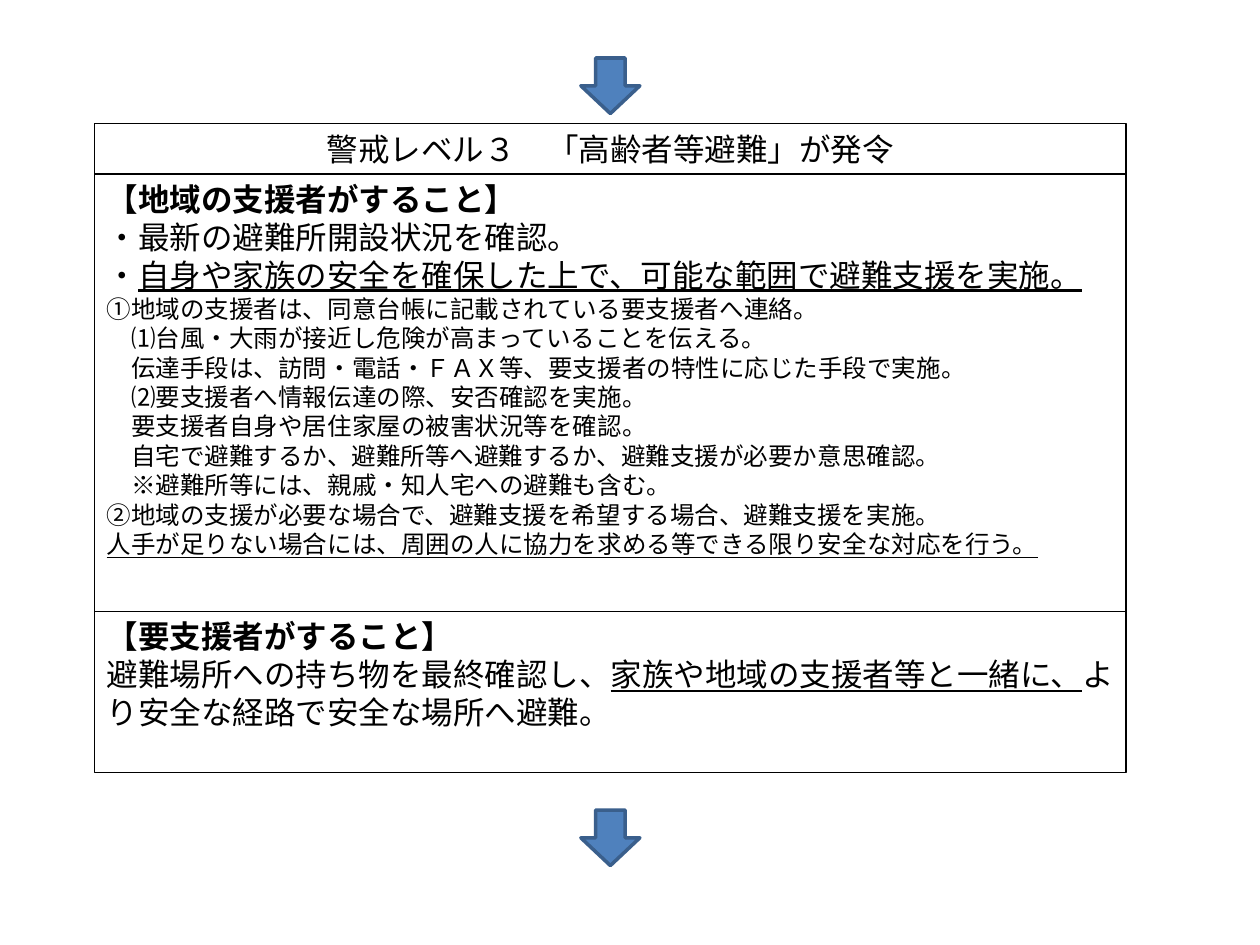
from lxml import etree
from pptx import Presentation
from pptx import util as u
from pptx.dml.color import RGBColor
from pptx.enum import shapes, text
from pptx.oxml.ns import qn

COLORS = {"ink": "000000", "arrow": "4F81BD", "arrow_edge": "3A5F8C"}
NOTO = "Noto Sans CJK JP"
LEFT, WIDTH = 1.9, 20.8
TITLE_TOP, BODY_TOP, DIVIDER_TOP = 2.49, 3.51, 12.32

deck = Presentation()
deck.slide_width, deck.slide_height = u.Cm(25.4), u.Cm(19.05)
slide = deck.slides.add_slide(deck.slide_layouts[6])


def add_frame(top, height):
    frame = slide.shapes.add_shape(
        shapes.MSO_SHAPE.RECTANGLE, u.Cm(LEFT), u.Cm(top), u.Cm(WIDTH), u.Cm(height))
    frame.shadow.inherit = False
    frame.fill.background()
    frame.line.color.rgb = RGBColor.from_string(COLORS["ink"])
    frame.line.width = u.Pt(0.75)
    frame.text_frame.word_wrap = True
    frame.text_frame.vertical_anchor = text.MSO_ANCHOR.TOP
    return frame.text_frame


def add_run(paragraph, words, size, font, bold=False, underline=False):
    run = paragraph.add_run()
    run.text = words
    run.font.size = u.Pt(size)
    run.font.name = font
    run.font.bold = bold
    run.font.underline = underline
    run.font.color.rgb = RGBColor.from_string(COLORS["ink"])
    etree.SubElement(run.font._element, qn("a:ea"), typeface=font)


title = add_frame(TITLE_TOP, BODY_TOP - TITLE_TOP).paragraphs[0]
title.alignment = text.PP_ALIGN.CENTER
add_run(title, "警戒レベル３　「高齢者等避難」が発令", 18, "Calibri")

supporter_heading = [("【地域の支援者がすること】", 18, "Calibri", True)]
supporter_points = [
    [("・最新の避難所開設状況を確認。", 18, "Calibri")],
    [("・", 18, "Calibri"),
     ("自身や家族の安全を確保した上で、可能な範囲で避難支援を実施。", 18, "Calibri", False, True)],
]
supporter_steps = [[(step, 14, NOTO)] for step in (
    "①地域の支援者は、同意台帳に記載されている要支援者へ連絡。",
    "　⑴台風・大雨が接近し危険が高まっていることを伝える。",
    "　伝達手段は、訪問・電話・ＦＡＸ等、要支援者の特性に応じた手段で実施。",
    "　⑵要支援者へ情報伝達の際、安否確認を実施。",
    "　要支援者自身や居住家屋の被害状況等を確認。",
    "　自宅で避難するか、避難所等へ避難するか、避難支援が必要か意思確認。",
    "　※避難所等には、親戚・知人宅への避難も含む。",
    "②地域の支援が必要な場合で、避難支援を希望する場合、避難支援を実施。",
)]
supporter_note = [
    ("人手が足りない場合には、周囲の人に協力を求める等できる限り安全な対応を行う。", 14, NOTO, False, True)]
evacuee_heading = [("【要支援者がすること】", 18, "Arial", True)]
evacuee_action = [
    ("避難場所への持ち物を最終確認し、", 18, NOTO),
    ("家族や地域の支援者等と一緒に、", 18, NOTO, False, True),
    ("より安全な経路で安全な場所へ避難。", 18, NOTO),
]

duties = add_frame(BODY_TOP, 12.07)
lines = [supporter_heading, *supporter_points, *supporter_steps,
         supporter_note, evacuee_heading, evacuee_action]
for index, line in enumerate(lines):
    paragraph = duties.add_paragraph() if index else duties.paragraphs[0]
    paragraph.alignment = text.PP_ALIGN.LEFT
    if line is evacuee_heading:
        paragraph.space_before = u.Pt(33.6)
    for run_parts in line:
        add_run(paragraph, *run_parts)

for arrow_top in (1.17, 16.33):
    arrow = slide.shapes.add_shape(
        shapes.MSO_SHAPE.DOWN_ARROW, u.Cm(11.71), u.Cm(arrow_top), u.Cm(1.19), u.Cm(1.12))
    arrow.shadow.inherit = False
    arrow.fill.solid()
    arrow.fill.fore_color.rgb = RGBColor.from_string(COLORS["arrow"])
    arrow.line.color.rgb = RGBColor.from_string(COLORS["arrow_edge"])
    arrow.line.width = u.Pt(2)

divider = slide.shapes.add_connector(
    shapes.MSO_CONNECTOR.STRAIGHT,
    u.Cm(LEFT), u.Cm(DIVIDER_TOP), u.Cm(LEFT + WIDTH), u.Cm(DIVIDER_TOP))
divider.line.color.rgb = RGBColor.from_string(COLORS["ink"])
divider.line.width = u.Pt(0.75)
etree.SubElement(divider._element.spPr, qn("a:effectLst"))

deck.save("out.pptx")
